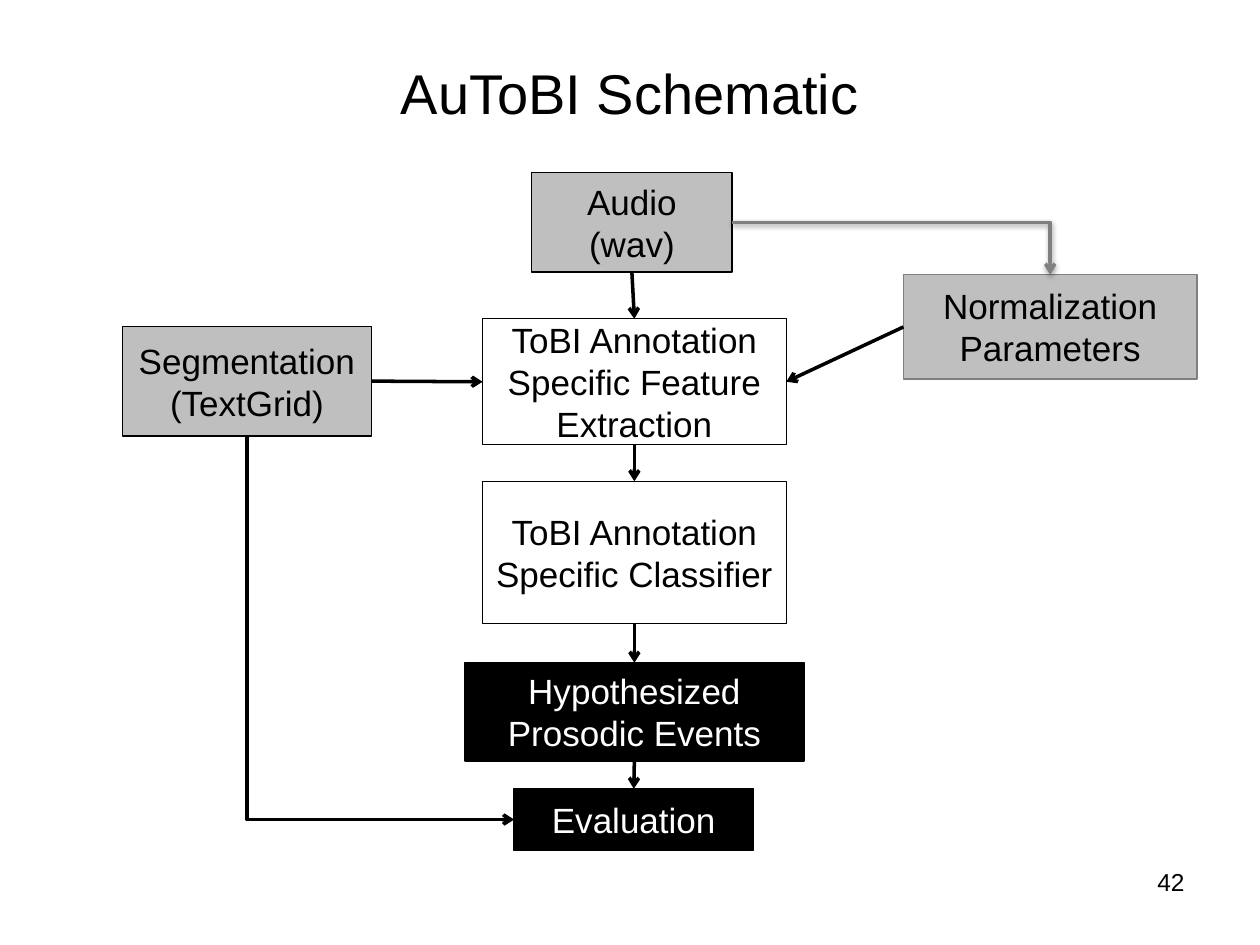
from lxml import etree
from pptx import Presentation
from pptx.dml.color import RGBColor
from pptx.enum.shapes import MSO_CONNECTOR as Link, MSO_SHAPE as Shape
from pptx.enum.text import MSO_ANCHOR as Anchor, PP_ALIGN as Align
from pptx.oxml.ns import qn
from pptx.util import Inches, Pt

COLORS = {"black": "000000", "white": "FFFFFF", "silver": "BFBFBF", "gray": "808080"}
TOP, LEFT, BOTTOM, RIGHT = range(4)

# name: (text, box, fill, line, font colour)
NODES = {
    "seg": ("Segmentation\v(TextGrid)", (0.97, 2.59, 1.98, 0.87), "silver", "black", "black"),
    "audio": ("Audio (wav)", (4.22, 1.37, 1.59, 0.79), "silver", "black", "black"),
    "norm": ("Normalization Parameters", (7.17, 2.18, 2.33, 0.83), "silver", "gray", "black"),
    "feat": ("ToBI Annotation Specific Feature Extraction", (3.83, 2.53, 2.41, 1),
             "white", "black", "black"),
    "class": ("ToBI Annotation Specific Classifier", (3.83, 3.82, 2.41, 1.13),
              "white", "black", "black"),
    "hypo": ("Hypothesized Prosodic Events", (3.69, 5.26, 2.69, 0.78), "black", "black", "white"),
    "eval": ("Evaluation", (4.08, 6.26, 1.9, 0.49), "black", "black", "white"),
}
ARROWS = [
    ("seg", RIGHT, "feat", LEFT),
    ("audio", BOTTOM, "feat", TOP),
    ("norm", LEFT, "feat", RIGHT),
    ("feat", BOTTOM, "class", TOP),
    ("class", BOTTOM, "hypo", TOP),
    ("hypo", BOTTOM, "eval", TOP),
]


def rgb(name):
    return RGBColor.from_string(COLORS[name])


def write(frame, text, size, color="black", align=Align.CENTER):
    frame.text = text
    frame.word_wrap = True
    para = frame.paragraphs[0]
    para.alignment = align
    para.font.name = "Arial"
    para.font.size = Pt(size)
    para.font.color.rgb = rgb(color)


def add_title(slide, box):
    title = slide.shapes.title
    title.left, title.top, title.width, title.height = map(Inches, box)
    write(title.text_frame, "AuToBI Schematic", 32)
    title.text_frame.vertical_anchor = Anchor.MIDDLE


def add_number(slide, box):
    area = slide.shapes.add_textbox(*map(Inches, box))
    write(area.text_frame, "42", 14, align=Align.RIGHT)


def add_node(slide, text, box, fill, line, color):
    node = slide.shapes.add_shape(Shape.RECTANGLE, *map(Inches, box))
    node.shadow.inherit = False
    node.fill.solid()
    node.fill.fore_color.rgb = rgb(fill)
    node.line.color.rgb = rgb(line)
    node.line.width = Pt(0.75)
    write(node.text_frame, text, 20, color)
    node.text_frame.vertical_anchor = Anchor.MIDDLE
    return node


def add_arrow(slide, start, out, end, into, kind=Link.STRAIGHT, color="black"):
    arrow = slide.shapes.add_connector(kind, 0, 0, 0, 0)
    arrow.begin_connect(start, out)
    arrow.end_connect(end, into)
    arrow.line.color.rgb = rgb(color)
    arrow.line.width = Pt(2)
    props = arrow._element.spPr
    etree.SubElement(props.find(qn("a:ln")), qn("a:tailEnd"), type="arrow")
    etree.SubElement(props, qn("a:effectLst"))
    return arrow


def add_elbow(slide, start, out, end, into, color="black"):
    """Add an arrow with one right-angled turn, leaving to the right or downwards."""
    arrow = add_arrow(slide, start, out, end, into, Link.ELBOW, color)
    props = arrow._element.spPr
    props.find(qn("a:prstGeom")).set("prst", "bentConnector2")
    if out == BOTTOM:
        wide, high = arrow.width, arrow.height
        shift = (wide - high) // 2
        arrow.left, arrow.top = arrow.left + shift, arrow.top - shift
        arrow.width, arrow.height = high, wide
        frame = props.find(qn("a:xfrm"))
        frame.set("rot", "16200000")
        frame.set("flipH", "1")
    return arrow


def add_shadow(arrow):
    effects = arrow._element.spPr.find(qn("a:effectLst"))
    shade = etree.SubElement(effects, qn("a:outerShdw"), blurRad="40000", dist="20000",
                             dir="5400000", rotWithShape="0")
    tint = etree.SubElement(shade, qn("a:srgbClr"), val=COLORS["black"])
    etree.SubElement(tint, qn("a:alpha"), val="38000")


def add_flow(slide):
    nodes = {name: add_node(slide, *parts) for name, parts in NODES.items()}
    for start, out, end, into in ARROWS:
        add_arrow(slide, nodes[start], out, nodes[end], into)
    add_elbow(slide, nodes["seg"], BOTTOM, nodes["eval"], LEFT)
    add_shadow(add_elbow(slide, nodes["audio"], RIGHT, nodes["norm"], TOP, "gray"))


def main():
    deck = Presentation()
    deck.slide_width, deck.slide_height = Inches(10), Inches(7.5)
    slide = deck.slides.add_slide(deck.slide_layouts[5])
    add_title(slide, (0.5, 0.3, 9, 0.87))
    add_number(slide, (7.17, 6.83, 2.33, 0.52))
    add_flow(slide)
    deck.save("out.pptx")


if __name__ == "__main__":
    main()
